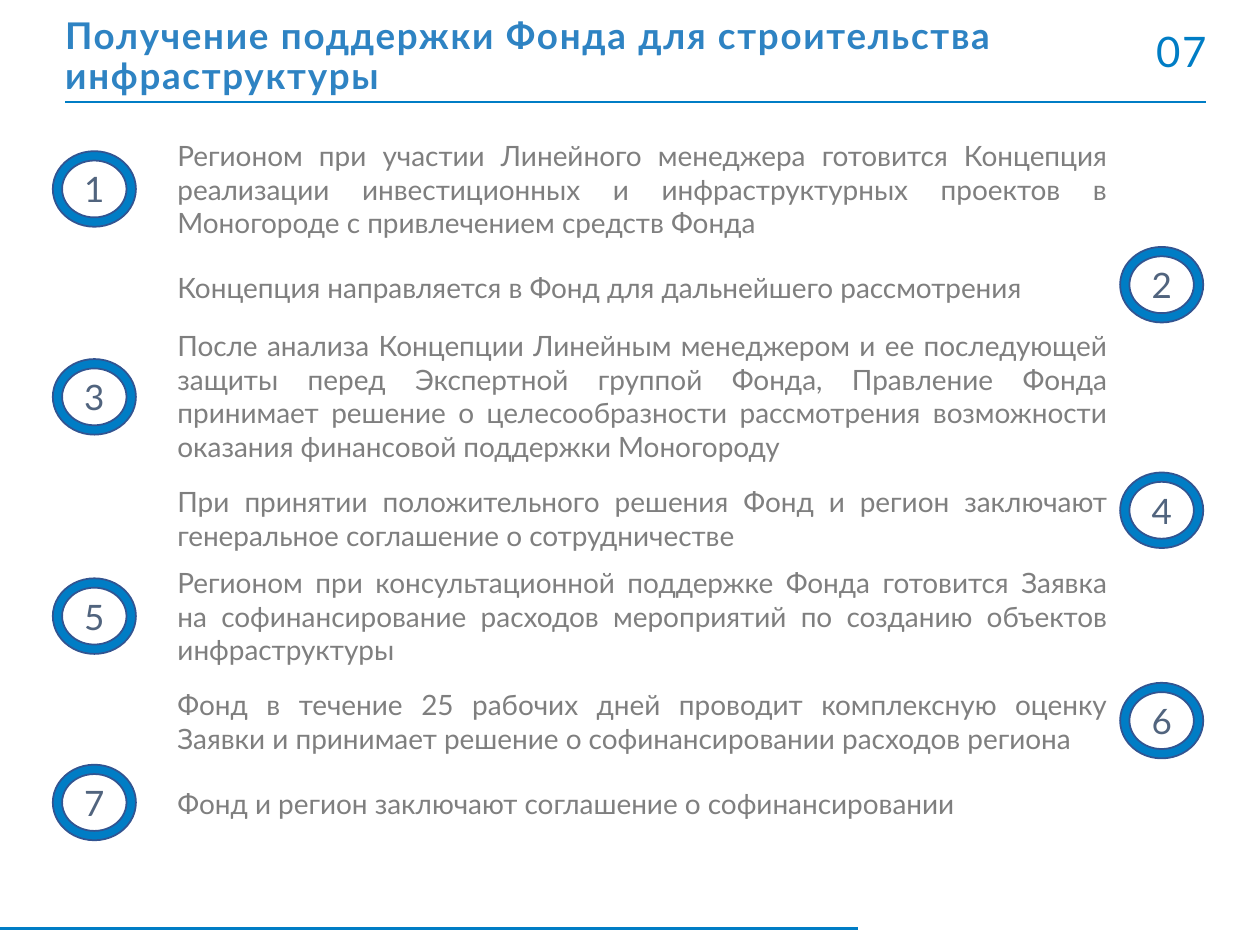
from lxml import etree
from pptx import Presentation
from pptx.dml.color import RGBColor
from pptx.enum.shapes import MSO_CONNECTOR, MSO_SHAPE
from pptx.enum.text import MSO_ANCHOR, PP_ALIGN
from pptx.oxml.ns import qn
from pptx.util import Pt

STRAIGHT = MSO_CONNECTOR.STRAIGHT
DONUT = MSO_SHAPE.DONUT
TOP, MIDDLE = MSO_ANCHOR.TOP, MSO_ANCHOR.MIDDLE
LEFT, CENTER, JUSTIFY = PP_ALIGN.LEFT, PP_ALIGN.CENTER, PP_ALIGN.JUSTIFY

FONT = "Lato"
COLORS = {
    "accent": "007DC5",
    "title": "2E83C3",
    "outline": "325491",
    "number": "51647E",
    "body": "7F7F7F",
}

TITLE = "Получение поддержки Фонда для строительства инфраструктуры"
PAGE_NUMBER = "07"

# donut top, text top, text width, text height, text
STEPS = [
    (86.4, 75.6, 545.76, 65.5,
     "Регионом при участии Линейного менеджера готовится Концепция реализации "
     "инвестиционных и инфраструктурных проектов в Моногороде с привлечением средств Фонда"),
    (141.1, 151.2, 593.3, 26.6,
     "Концепция направляется в Фонд для дальнейшего рассмотрения"),
    (205.2, 184.3, 545.76, 85,
     "После анализа Концепции Линейным менеджером и ее последующей защиты перед "
     "Экспертной группой Фонда, Правление Фонда принимает решение о целесообразности "
     "рассмотрения возможности оказания финансовой поддержки Моногороду"),
    (270, 273.6, 545.76, 46.1,
     "При принятии положительного решения Фонд и регион заключают генеральное "
     "соглашение о сотрудничестве"),
    (330.5, 319.7, 545.76, 65.5,
     "Регионом при консультационной поддержке Фонда готовится Заявка на "
     "софинансирование расходов мероприятий по созданию объектов инфраструктуры"),
    (390.2, 389.5, 545.76, 46.1,
     "Фонд в течение 25 рабочих дней проводит комплексную оценку Заявки и принимает "
     "решение о софинансировании расходов региона"),
    (437, 445.7, 545.76, 26.6,
     "Фонд и регион заключают соглашение о софинансировании"),
]
DONUT_LEFTS = (30.2, 640.1)  # odd steps, even steps
DONUT_WIDTH, DONUT_HEIGHT = 47.5, 43.2
DONUT_RING = 0.124
TEXT_LEFT = 94.3


def color(name):
    return RGBColor.from_string(COLORS[name])


def write(shape, text, size, color_name, align, anchor,
          bold=False, line_spacing=1.0, letter_spacing=0):
    frame = shape.text_frame
    frame.word_wrap = True
    frame.vertical_anchor = anchor
    para = frame.paragraphs[0]
    para.text = text
    para.alignment = align
    para.line_spacing = line_spacing
    span = para.runs[0]
    span.font.name = FONT
    span.font.size = Pt(size)
    span.font.bold = bold
    span.font.color.rgb = color(color_name)
    if letter_spacing:
        span.font._element.set("spc", str(letter_spacing * 100))


def add_text(page, left, top, width, height, *text_style, **options):
    box = page.shapes.add_textbox(Pt(left), Pt(top), Pt(width), Pt(height))
    write(box, *text_style, **options)


def add_rule(page, left, right, y, weight):
    rule = page.shapes.add_connector(STRAIGHT, Pt(left), Pt(y), Pt(right), Pt(y))
    rule.line.color.rgb = color("accent")
    rule.line.width = Pt(weight)
    etree.SubElement(rule._element.spPr, qn("a:effectLst"))


def add_donut(page, left, top, number):
    donut = page.shapes.add_shape(
        DONUT, Pt(left), Pt(top), Pt(DONUT_WIDTH), Pt(DONUT_HEIGHT))
    donut.adjustments[0] = DONUT_RING
    donut.shadow.inherit = False
    donut.fill.solid()
    donut.fill.fore_color.rgb = color("accent")
    donut.line.color.rgb = color("outline")
    donut.line.width = Pt(1)
    write(donut, str(number), 20, "number", CENTER, MIDDLE, letter_spacing=1)


def main():
    deck = Presentation()
    deck.slide_width, deck.slide_height = Pt(720), Pt(540)
    page = deck.slides.add_slide(deck.slide_layouts[6])

    add_rule(page, 0, 490.3, 530.6, 1.77)
    add_rule(page, 37.4, 689, 58.3, 1)
    add_text(page, 30.2, 11.5, 611.3, 42.5, TITLE, 21, "title", LEFT, MIDDLE,
             bold=True, line_spacing=0.9, letter_spacing=1)
    add_text(page, 648.7, 9.4, 52.6, 42.5, PAGE_NUMBER, 24, "accent", CENTER, MIDDLE,
             line_spacing=0.9, letter_spacing=1)

    for index, (donut_top, text_top, width, height, text) in enumerate(STEPS):
        add_donut(page, DONUT_LEFTS[index % 2], donut_top, index + 1)
        add_text(page, TEXT_LEFT, text_top, width, height,
                 text, 16, "body", JUSTIFY, TOP)

    deck.save("out.pptx")


if __name__ == "__main__":
    main()
